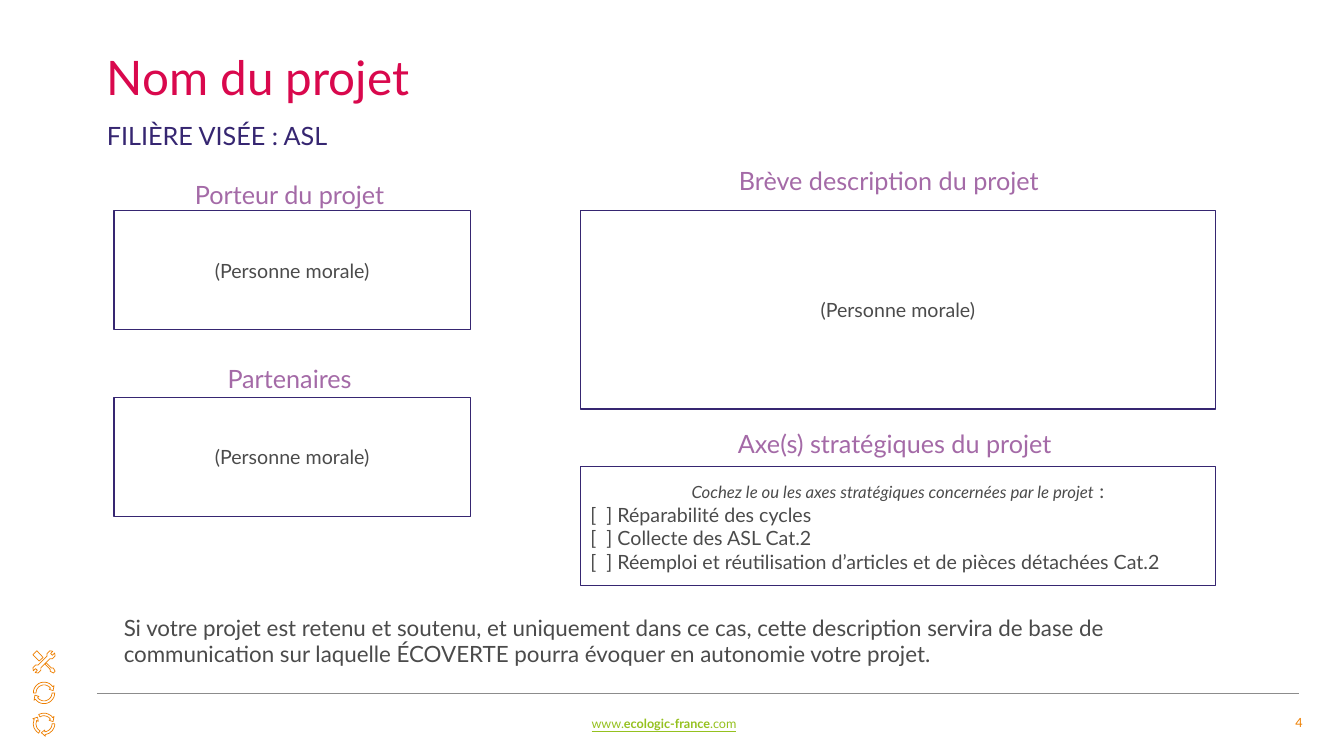
from math import cos, radians, sin

from pptx import Presentation
from pptx.dml.color import RGBColor
from pptx.enum.shapes import MSO_CONNECTOR, MSO_SHAPE
from pptx.enum.text import MSO_ANCHOR, PP_ALIGN
from pptx.oxml.ns import qn
from pptx.util import Cm, Pt
from lxml.etree import SubElement

# Content: a paragraph is a list of (text, format) runs
COLORS = {"title": "D9084D", "navy": "362671", "mauve": "A46AA7", "text": "4B4B4B",
          "orange": "EE7F00", "green": "95C11F", "rule": "8C8C8C", "white": "FFFFFF"}
TITLE = "Nom du projet"
SUBTITLE = "FILIÈRE VISÉE : ASL"
NOTE = ("Si votre projet est retenu et soutenu, et uniquement dans ce cas, cette description "
        "servira de base de communication sur laquelle ÉCOVERTE pourra évoquer en autonomie "
        "votre projet.")
WEBSITE = [("www.", {}), ("ecologic-france", {"bold": True}), (".com", {})]
PAGE_NUMBER = "4"
PERSON = [[("(Personne morale)", {})]]
AXES = [[("Cochez le ou les axes stratégiques concernées par le projet", {"size": Pt(12), "italic": True}),
         (" :", {})],
        [("[  ] Réparabilité des cycles", {})],
        [("[  ] Collecte des ASL Cat.2", {})],
        [("[  ] Réemploi et réutilisation d’articles et de pièces détachées Cat.2", {})]]

# Layout in cm
MARGIN, TEXT_WIDTH = 2.44, 29
LEFT_COLUMN, RIGHT_COLUMN = (2.87, 8.99), (14.63, 16)  # left, width
HEADING_SIZE = (12, 1.02)
# heading, heading centre, heading top, column, box top, box height, box paragraphs
SECTIONS = [
    ("Porteur du projet", 7.3, 4.39, LEFT_COLUMN, 5.31, 3, PERSON),
    ("Partenaires", 7.3, 9.02, LEFT_COLUMN, 10.01, 3, PERSON),
    ("Brève description du projet", 22.4, 4.04, RIGHT_COLUMN, 5.31, 5, PERSON),
    ("Axe(s) stratégiques du projet", 22.55, 10.67, RIGHT_COLUMN, 11.76, 3, AXES),
]
ICON_CENTER, ICON_TOP, ICON_STEP, ICON_SIZE = 1.11, 16.68, 0.78, 0.56

# Tool outlines on a grid of 100 by 100
TOOLS = [
    [(36, 76), (36, 88), (24, 100), (10, 98), (20, 88), (12, 80), (2, 90), (0, 76), (12, 64), (24, 64),
     (64, 24), (64, 12), (76, 0), (90, 2), (80, 12), (88, 20), (98, 10), (100, 24), (88, 36), (76, 36)],
    [(0, 18), (18, 0), (46, 30), (28, 46)],
    [(54, 60), (60, 54), (84, 78), (92, 78), (100, 92), (92, 100), (78, 92), (78, 84)],
]


def color(name):
    return RGBColor.from_string(COLORS[name])


def set_values(target, values):
    for name, value in values.items():
        setattr(target, name, value)


def place(shape, left, top, width, height):
    set_values(shape, {"left": Cm(left), "top": Cm(top), "width": Cm(width), "height": Cm(height)})


def write_runs(paragraph, runs, size, color_name, alignment=PP_ALIGN.LEFT):
    set_values(paragraph, {"alignment": alignment, "space_before": Pt(0)})
    for text, values in runs:
        run = paragraph.add_run()
        run.text = text
        set_values(run.font, {"name": "Lato", "size": Pt(size), **values})
        run.font.color.rgb = color(color_name)


def add_text(slide, box, runs, size, color_name, alignment=PP_ALIGN.LEFT):
    shape = slide.shapes.add_textbox(*map(Cm, box))
    shape.text_frame.word_wrap = True
    write_runs(shape.text_frame.paragraphs[0], runs, size, color_name, alignment)


def add_box(slide, box, paragraphs):
    shape = slide.shapes.add_shape(MSO_SHAPE.RECTANGLE, *map(Cm, box))
    shape.shadow.inherit = False
    shape.fill.solid()
    shape.fill.fore_color.rgb = color("white")
    shape.line.color.rgb = color("navy")
    shape.line.width = Pt(1)
    frame = shape.text_frame
    set_values(frame, {"word_wrap": True, "vertical_anchor": MSO_ANCHOR.MIDDLE})
    for index, runs in enumerate(paragraphs):
        paragraph = frame.add_paragraph() if index else frame.paragraphs[0]
        write_runs(paragraph, runs, 14, "text", PP_ALIGN.LEFT if index else PP_ALIGN.CENTER)


def arc_arrow(start, sweep):
    """Outline of a curved arrow around the centre of the 100 grid."""
    def point(radius, angle):
        return 50 + radius * cos(radians(angle)), 50 + radius * sin(radians(angle))
    angles = [start + sweep * step / 12 for step in range(13)]
    end = angles[-1]
    return ([point(48, angle) for angle in angles]
            + [point(56, end), point(42, end + 22), point(28, end)]
            + [point(36, angle) for angle in reversed(angles)])


def add_icon(slide, row, outlines):
    origin_x = Cm(ICON_CENTER - ICON_SIZE / 2)
    origin_y = Cm(ICON_TOP + row * ICON_STEP - ICON_SIZE / 2)
    for points in outlines:
        builder = slide.shapes.build_freeform(*points[0], scale=Cm(ICON_SIZE) / 100)
        builder.add_line_segments(points[1:], close=True)
        shape = builder.convert_to_shape(origin_x, origin_y)
        shape.shadow.inherit = False
        shape.fill.background()
        shape.line.color.rgb = color("orange")
        shape.line.width = Pt(0.5)


def main():
    presentation = Presentation()
    set_values(presentation, {"slide_width": Cm(33.87), "slide_height": Cm(19.05)})
    slide = presentation.slides.add_slide(presentation.slide_layouts[1])

    # Footer
    rule = slide.shapes.add_connector(MSO_CONNECTOR.STRAIGHT, Cm(MARGIN), Cm(17.48), Cm(32.74), Cm(17.48))
    SubElement(rule._element.spPr, qn("a:effectLst"))
    rule.line.color.rgb = color("rule")
    rule.line.width = Pt(0.75)
    website = [(text, {"underline": True, **values}) for text, values in WEBSITE]
    add_text(slide, (14.66, 17.91, 13.31, 0.63), website, 9, "green")
    add_text(slide, (31.45, 17.88, 1.63, 0.66), [(PAGE_NUMBER, {})], 9, "orange", PP_ALIGN.RIGHT)

    # Icons: tools, two arrows, three arrows
    icons = [TOOLS] + [[arc_arrow(360 / count * turn, 360 / count - 36) for turn in range(count)]
                       for count in (2, 3)]
    for row, outlines in enumerate(icons):
        add_icon(slide, row, outlines)

    # Title and subtitle
    title, subtitle = slide.shapes.title, slide.placeholders[1]
    for shape, top, height, text, size, color_name in (
            (title, 1.24, 1.57, TITLE, 34, "title"), (subtitle, 2.9, 1.02, SUBTITLE, 18, "navy")):
        place(shape, MARGIN, top, TEXT_WIDTH, height)
        paragraph = shape.text_frame.paragraphs[0]
        properties = paragraph._p.get_or_add_pPr()
        properties.set("marL", "0")
        properties.set("indent", "0")
        SubElement(properties, qn("a:buNone"))
        write_runs(paragraph, [(text, {})], size, color_name)
    title.text_frame.paragraphs[0].line_spacing = 0.9

    # Headed boxes
    heading_width, heading_height = HEADING_SIZE
    for heading, center, heading_top, (left, width), top, height, paragraphs in SECTIONS:
        add_box(slide, (left, top, width, height), paragraphs)
        add_text(slide, (center - heading_width / 2, heading_top, heading_width, heading_height),
                 [(heading, {})], 18, "mauve", PP_ALIGN.CENTER)

    # Closing note
    add_text(slide, (LEFT_COLUMN[0], 15.34, 27.74, 1.63), [(NOTE, {})], 16, "text")

    presentation.save("out.pptx")


if __name__ == "__main__":
    main()
